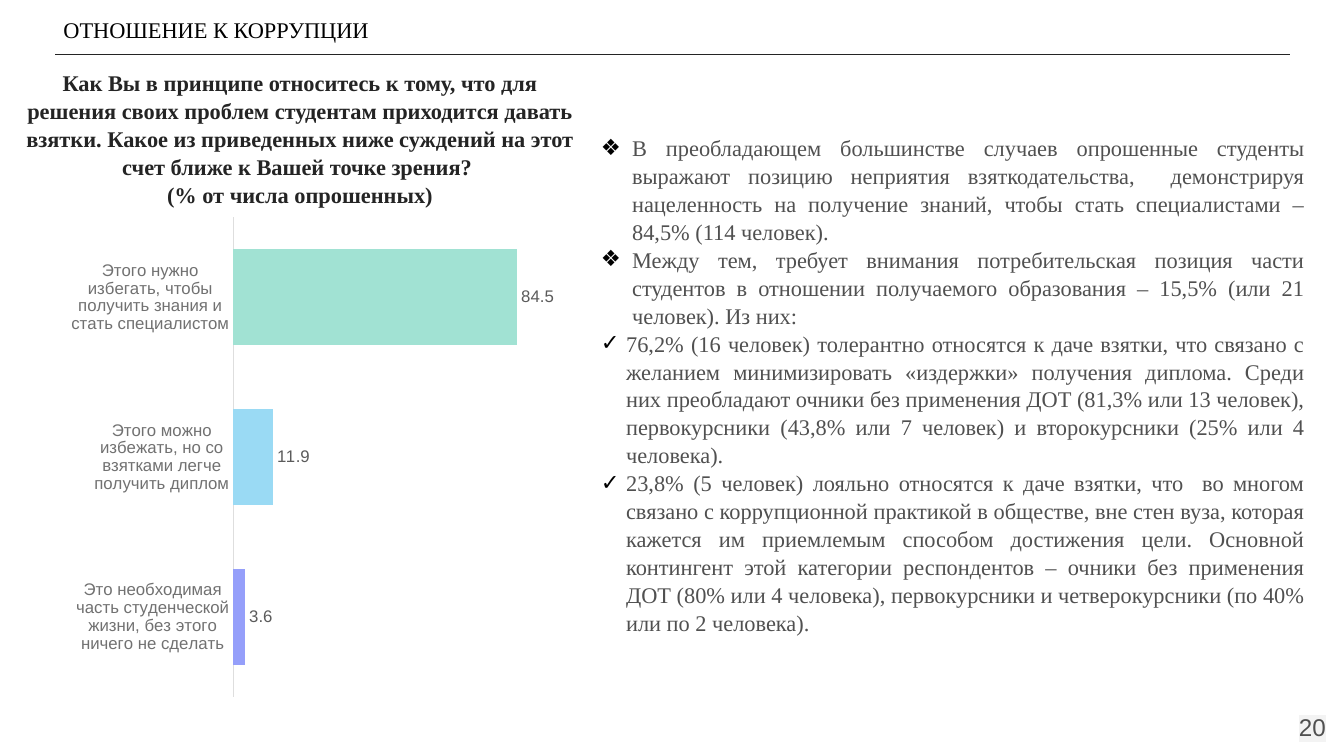
import pptx
import pptx.chart.data
import pptx.dml.color
import pptx.enum.chart
import pptx.enum.shapes
import pptx.enum.text
import pptx.oxml
import pptx.oxml.ns
import pptx.util

Inches, Pt = pptx.util.Inches, pptx.util.Pt
ALIGN = pptx.enum.text.PP_ALIGN
ANCHOR = pptx.enum.text.MSO_ANCHOR
SERIF, SANS = "Times New Roman", "Arial"

QUESTION = (
    "Как Вы в принципе относитесь к тому, что для решения своих проблем студентам "
    "приходится давать взятки. Какое из приведенных ниже суждений на этот счет ближе "
    "к Вашей точке зрения? \v(% от числа опрошенных)"
)
# Bullet, hanging indent in inches, text
FINDINGS = [
    ("❖", 0.31,
     "В преобладающем большинстве случаев опрошенные студенты выражают позицию неприятия "
     "взяткодательства,  демонстрируя нацеленность на получение знаний, чтобы стать "
     "специалистами – 84,5% (114 человек)."),
    ("❖", 0.31,
     "Между тем, требует внимания потребительская позиция части студентов в отношении "
     "получаемого образования – 15,5% (или 21 человек). Из них:"),
    ("✓", 0.25,
     "76,2% (16 человек) толерантно относятся к даче взятки, что связано с желанием "
     "минимизировать «издержки» получения диплома. Среди них преобладают очники без "
     "применения ДОТ (81,3% или 13 человек), первокурсники (43,8% или 7 человек) и "
     "второкурсники (25% или 4 человека). "),
    ("✓", 0.25,
     "23,8% (5 человек) лояльно относятся к даче взятки, что  во многом связано с "
     "коррупционной практикой в обществе, вне стен вуза, которая кажется им приемлемым "
     "способом достижения цели. Основной контингент этой категории респондентов – очники "
     "без применения ДОТ (80% или 4 человека), первокурсники и четверокурсники (по 40% "
     "или по 2 человека)."),
]
# Category, share, bar colour; from the bottom bar up
ANSWERS = [
    ("Это необходимая часть студенческой жизни, без этого ничего не сделать", 3.6, "959FFA"),
    ("Этого можно избежать, но со взятками легче получить диплом", 11.9, "9ADAF4"),
    ("Этого нужно избегать, чтобы получить знания и стать специалистом", 84.5, "A1E2D3"),
]


def rgb(value):
    return pptx.dml.color.RGBColor.from_string(value)


def xml(tag, prefix, attributes="", inner=""):
    return pptx.oxml.parse_xml(
        f'<{prefix}:{tag} {pptx.oxml.ns.nsdecls(prefix)} {attributes}>{inner}</{prefix}:{tag}>'
    )


def style(font, size, color, name, bold=False):
    font.size, font.name, font.bold = Pt(size), name, bold
    font.color.rgb = rgb(color)


def place(shape, box, inset, anchor=ANCHOR.TOP):
    shape.left, shape.top, shape.width, shape.height = (Inches(side) for side in box)
    frame = shape.text_frame
    frame.word_wrap = True
    frame.auto_size = pptx.enum.text.MSO_AUTO_SIZE.NONE
    frame.vertical_anchor = anchor
    frame.margin_left = frame.margin_right = Inches(inset)
    frame.margin_top = frame.margin_bottom = Inches(inset)
    return frame


def write(paragraph, text, *, size=16, color="242424", font=SERIF, bold=False,
          align=ALIGN.LEFT, spacing=1.0):
    paragraph.text = text
    paragraph.alignment = align
    paragraph.line_spacing = spacing
    paragraph.space_before = paragraph.space_after = Pt(0)
    for run in paragraph.runs:
        style(run.font, size, color, font, bold)


def add_bullet(paragraph, mark, indent):
    properties = paragraph._p.get_or_add_pPr()
    properties.set("marL", str(Inches(indent)))
    properties.set("indent", str(-Inches(indent)))
    properties.append(xml("buClr", "a", inner='<a:srgbClr val="000000"/>'))
    properties.append(xml("buFont", "a", f'typeface="{SANS}"'))
    properties.append(xml("buChar", "a", f'char="{mark}"'))


def add_header(slide, box):
    left, top, width, height = box
    heading = place(slide.shapes.add_textbox(0, 0, 0, 0), (left - 0.05, top, 6.17, height), 0.13)
    write(heading.paragraphs[0], "ОТНОШЕНИЕ К КОРРУПЦИИ", color="000000", spacing=1.04)
    rule_y = Inches(top + 0.52)
    rule = slide.shapes.add_connector(
        pptx.enum.shapes.MSO_CONNECTOR.STRAIGHT,
        Inches(left), rule_y, Inches(left + width), rule_y)
    rule.line.color.rgb = rgb("242424")
    rule.line.width = Pt(0.75)
    rule._element.spPr.append(xml("effectLst", "a"))


def add_question(slide, box):
    frame = place(slide.shapes.title, box, 0.1)
    write(frame.paragraphs[0], QUESTION, bold=True, align=ALIGN.CENTER, spacing=1.04)


def add_findings(slide, box):
    frame = place(slide.placeholders[1], box, 0.13)
    for index, (mark, indent, text) in enumerate(FINDINGS):
        paragraph = frame.add_paragraph() if index else frame.paragraphs[0]
        write(paragraph, text, color="505050", align=ALIGN.JUSTIFY, spacing=1.04)
        add_bullet(paragraph, mark, indent)


def fix_plot_area(chart, x, y, width, height):
    """Set the inner plot area as fractions of the chart."""
    plot_area = chart._chartSpace.chart.plotArea
    for layout in plot_area.findall(pptx.oxml.ns.qn("c:layout")):
        plot_area.remove(layout)
    settings = {"layoutTarget": "inner", "xMode": "edge", "yMode": "edge",
                "x": x, "y": y, "w": width, "h": height}
    inner = "".join(f'<c:{tag} val="{value}"/>' for tag, value in settings.items())
    plot_area.insert(0, xml("layout", "c", inner=f"<c:manualLayout>{inner}</c:manualLayout>"))


def add_answers_chart(slide, box):
    data = pptx.chart.data.CategoryChartData()
    data.categories = [category for category, _, _ in ANSWERS]
    data.add_series("Series 1", [share for _, share, _ in ANSWERS])
    chart = slide.shapes.add_chart(
        pptx.enum.chart.XL_CHART_TYPE.BAR_CLUSTERED,
        *(Inches(side) for side in box), data).chart
    chart.has_legend = chart.has_title = False
    style(chart.font, 12, "242424", SANS)
    fix_plot_area(chart, 0.325, 0.001, 0.576, 0.999)

    categories, values = chart.category_axis, chart.value_axis
    categories.major_tick_mark = pptx.enum.chart.XL_TICK_MARK.NONE
    categories.format.line.color.rgb = rgb("DEDEDE")
    categories.format.line.width = Pt(0.75)
    style(categories.tick_labels.font, 12, "717171", SANS)
    values.minimum_scale, values.maximum_scale = 0, 90
    values.has_major_gridlines = False
    values.visible = False

    plot = chart.plots[0]
    plot.gap_width = 66
    plot.vary_by_categories = False
    shares = plot.series[0]
    shares.format.fill.solid()
    shares.format.fill.fore_color.rgb = rgb("62CFB5")
    for index, (_, _, color) in enumerate(ANSWERS):
        fill = shares.points[index].format.fill
        fill.solid()
        fill.fore_color.rgb = rgb(color)
    labels = shares.data_labels
    labels.show_value = True
    labels.position = pptx.enum.chart.XL_LABEL_POSITION.OUTSIDE_END
    style(labels.font, 12, "5B5B5B", SANS)


def add_page_number(slide, box):
    frame = place(slide.shapes.add_textbox(0, 0, 0, 0), box, 0.13, ANCHOR.MIDDLE)
    paragraph = frame.paragraphs[0]
    write(paragraph, "20", size=17.3, color="505050", font=SANS, align=ALIGN.RIGHT)
    fill = paragraph.runs[0]._r.rPr.find(pptx.oxml.ns.qn("a:solidFill"))
    fill.addnext(xml("highlight", "a", inner='<a:srgbClr val="F3F3F3"/>'))


def main():
    deck = pptx.Presentation()
    deck.slide_width, deck.slide_height = Inches(13.33), Inches(7.5)
    slide = deck.slides.add_slide(deck.slide_layouts[1])
    add_header(slide, (0.55, 0.02, 12.24, 0.54))
    add_question(slide, (0.12, 0.58, 5.71, 1.45))
    add_findings(slide, (5.83, 1.19, 7.24, 5.9))
    add_answers_chart(slide, (0.62, 2.15, 5.21, 4.77))
    add_page_number(slide, (12.48, 6.93, 0.8, 0.57))
    deck.save("out.pptx")


if __name__ == "__main__":
    main()
